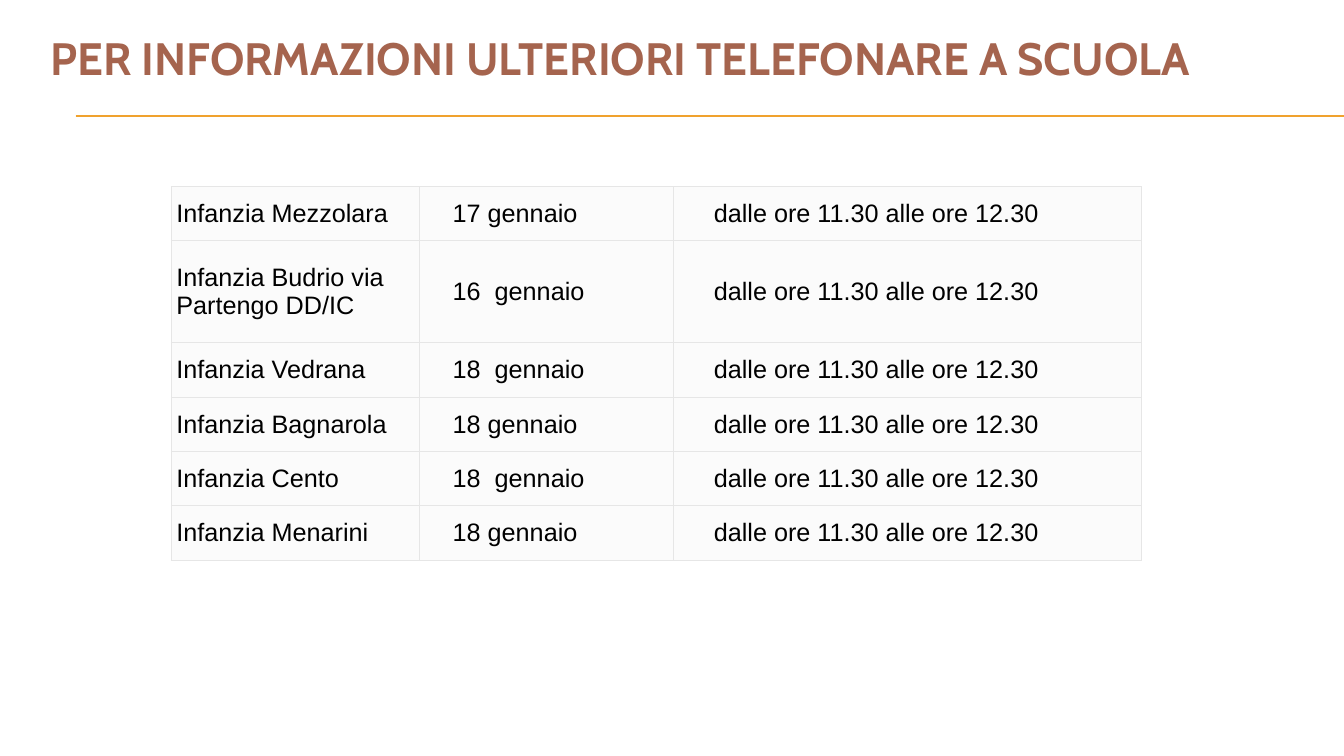
"""Build the slide listing the phone hours of each nursery school."""
from lxml.etree import SubElement
from pptx import Presentation
from pptx.dml.color import RGBColor
from pptx.enum.shapes import MSO_CONNECTOR
from pptx.enum.text import MSO_ANCHOR
from pptx.oxml import parse_xml
from pptx.oxml.ns import nsdecls, qn
from pptx.util import Inches, Pt

BORDER = "E6E6E6"
HOURS = "dalle ore 11.30 alle ore 12.30"
SCHOOLS = [
    ("Infanzia Mezzolara", "17 gennaio"),
    ("Infanzia Budrio via Partengo DD/IC", "16  gennaio"),
    ("Infanzia Vedrana", "18  gennaio"),
    ("Infanzia Bagnarola", "18 gennaio"),
    ("Infanzia Cento", "18  gennaio"),
    ("Infanzia Menarini", "18 gennaio"),
]
COL_WIDTHS = [2.46, 2.52, 4.64]
COL_INDENTS = [0.05, 0.33, 0.4]
ROW_HEIGHTS = [0.54, 1.01, 0.54, 0.54, 0.54, 0.54]


def rgb(color):
    return RGBColor.from_string(color)


def style_text(p, font, size, color, bold=False):
    for r in p.runs:
        r.font.name = font
        r.font.size = Pt(size)
        r.font.bold = bold
        r.font.color.rgb = rgb(color)


prs = Presentation()
prs.slide_width = Inches(13.33)
prs.slide_height = Inches(7.5)
s = prs.slides.add_slide(prs.slide_layouts[6])

for y in (1.15, 1.16):
    rule = s.shapes.add_connector(
        MSO_CONNECTOR.STRAIGHT, Inches(0.75), Inches(y), Inches(13.33), Inches(y))
    rule.line.color.rgb = rgb("F0A22E")
    rule.line.width = Pt(0.75)
    SubElement(rule.element.spPr, qn("a:effectLst"))

title = s.shapes.add_textbox(Inches(0.4), Inches(0.11), Inches(12.93), Inches(0.92))
tf = title.text_frame
tf.word_wrap = True
tf.vertical_anchor = MSO_ANCHOR.MIDDLE
tf.text = "PER INFORMAZIONI ULTERIORI TELEFONARE A SCUOLA"
style_text(tf.paragraphs[0], "Cabin", 32.4, "A5644E", bold=True)

table = s.shapes.add_table(
    len(SCHOOLS), len(COL_WIDTHS), Inches(1.7), Inches(1.85),
    Inches(sum(COL_WIDTHS)), Inches(sum(ROW_HEIGHTS))).table
table.first_row = False
table.horz_banding = False
for col, width in zip(table.columns, COL_WIDTHS):
    col.width = Inches(width)
for row, height in zip(table.rows, ROW_HEIGHTS):
    row.height = Inches(height)

for row, (school, day) in zip(table.rows, SCHOOLS):
    for cell, text, indent in zip(row.cells, (school, day, HOURS), COL_INDENTS):
        cell.text_frame.text = text
        style_text(cell.text_frame.paragraphs[0], "Arial", 18, "000000")
        cell.vertical_anchor = MSO_ANCHOR.MIDDLE
        cell.margin_left = Inches(indent)
        cell.margin_right = Inches(0.05)
        cell.margin_top = cell.margin_bottom = Inches(0.02)
        cell.fill.solid()
        cell.fill.fore_color.rgb = rgb("FBFBFB")
        tc_pr = cell._tc.get_or_add_tcPr()
        for i, side in enumerate(("lnL", "lnR", "lnT", "lnB")):
            tc_pr.insert(i, parse_xml(
                f'<a:{side} {nsdecls("a")} w="{Pt(0.75)}"><a:solidFill>'
                f'<a:srgbClr val="{BORDER}"/></a:solidFill></a:{side}>'))

prs.save("out.pptx")
